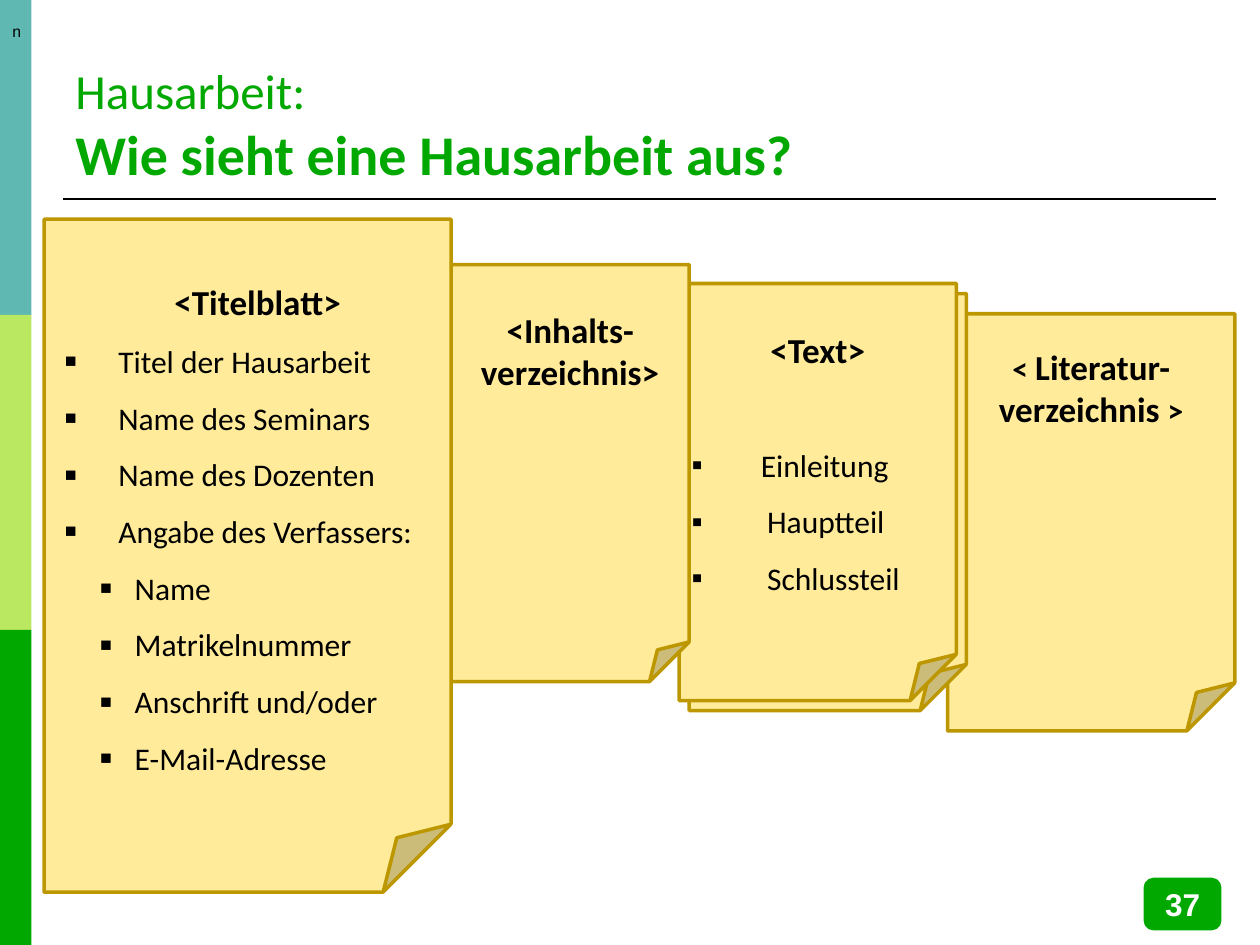
"""Build the slide that shows the parts of a term paper as sheets of paper."""
from dataclasses import dataclass

from lxml import etree
from pptx import Presentation
from pptx.dml.color import RGBColor
from pptx.enum import shapes, text
from pptx.oxml import ns
from pptx.util import Inches, Pt


@dataclass(frozen=True)
class Theme:
    """Colours, fonts and type sizes of the slide."""
    teal: str = "5FB8B2"
    lime: str = "BAE860"
    green: str = "00A800"
    paper: str = "FFEB99"
    paper_edge: str = "BD9700"
    black: str = "000000"
    white: str = "FFFFFF"
    body_font: str = "Calibri"
    label_font: str = "Arial"
    title: int = 32
    kicker: int = 28
    heading: int = 20
    body: int = 18
    label: int = 9
    edge: float = 2
    rule: float = 1.5


THEME = Theme()


def style_run(run, size, color=THEME.black, bold=False, font=THEME.body_font):
    """Set the type of one run."""
    run.font.name = font
    run.font.size = Pt(size)
    run.font.bold = bold
    run.font.color.rgb = RGBColor.from_string(color)


def set_insets(frame, left=0.1, top=0.05, right=0.1, bottom=0.05):
    """Set the margins of a text frame in inches."""
    frame.margin_left, frame.margin_top = Inches(left), Inches(top)
    frame.margin_right, frame.margin_bottom = Inches(right), Inches(bottom)


def add_block(slide, kind, box, fill, edge=None):
    """Add a filled preset shape with an optional outline."""
    block = slide.shapes.add_shape(kind, *map(Inches, box))
    block.shadow.inherit = False
    block.fill.solid()
    block.fill.fore_color.rgb = RGBColor.from_string(fill)
    if edge:
        block.line.color.rgb = RGBColor.from_string(edge)
        block.line.width = Pt(THEME.edge)
    else:
        block.line.fill.background()
    return block


def add_sheet(slide, box, heading=(), inset_left=0.1, inset_top=0.05, inset_right=0.1):
    """Add a folded sheet with a centred bold heading and return its text frame."""
    sheet = add_block(slide, shapes.MSO_SHAPE.FOLDED_CORNER, box,
                      THEME.paper, THEME.paper_edge)
    frame = sheet.text_frame
    frame.word_wrap = True
    frame.vertical_anchor = text.MSO_ANCHOR.TOP
    set_insets(frame, inset_left, inset_top, inset_right)
    paragraph = frame.paragraphs[0]
    paragraph.alignment = text.PP_ALIGN.CENTER
    for words, size in heading:
        run = paragraph.add_run()
        run.text = words
        style_run(run, size, bold=True)
    return frame


def add_bullet(frame, words, margin, hanging, bullet_size=100, space_before=0):
    """Add a square-bulleted line with a hanging indent in inches."""
    paragraph = frame.add_paragraph()
    paragraph.text = words
    paragraph.alignment = text.PP_ALIGN.LEFT
    properties = paragraph._p.get_or_add_pPr()
    properties.set("marL", str(Inches(margin)))
    properties.set("indent", str(-Inches(hanging)))
    for tag, name, value in (("a:buSzPct", "val", str(bullet_size * 1000)),
                             ("a:buFont", "typeface", THEME.label_font),
                             ("a:buChar", "char", "▪")):
        etree.SubElement(properties, ns.qn(tag)).set(name, value)
    paragraph.line_spacing = 1.5
    paragraph.space_before = Pt(space_before)
    style_run(paragraph.runs[0], THEME.body)


def add_side_bands(slide):
    """Add the three stacked colour bands at the left edge."""
    height = 2.5
    for row, color in enumerate((THEME.teal, THEME.lime, THEME.green)):
        add_block(slide, shapes.MSO_SHAPE.RECTANGLE,
                  (0, row * height, 0.25, height), color)


def add_title(slide):
    """Add the two-line title and the rule below it."""
    rule = slide.shapes.add_connector(shapes.MSO_CONNECTOR.STRAIGHT, Inches(0.5),
                                      Inches(1.58), Inches(9.65), Inches(1.58))
    rule.line.color.rgb = RGBColor.from_string(THEME.black)
    rule.line.width = Pt(THEME.rule)
    etree.SubElement(rule._element.spPr, ns.qn("a:effectLst"))
    title = slide.shapes.add_textbox(Inches(0.5), Inches(0.28), Inches(9.15), Inches(1.25))
    frame = title.text_frame
    frame.word_wrap = True
    frame.vertical_anchor = text.MSO_ANCHOR.BOTTOM
    frame.paragraphs[0].text = "Hausarbeit:\vWie sieht eine Hausarbeit aus?"
    kicker, question = frame.paragraphs[0].runs
    style_run(kicker, THEME.kicker, THEME.green)
    style_run(question, THEME.title, THEME.green, bold=True)


def add_corner_label(slide):
    """Add the small letter on the top colour band."""
    label = slide.shapes.add_textbox(Inches(0), Inches(0.12), Inches(0.27), Inches(0.25))
    frame = label.text_frame
    frame.word_wrap = False
    frame.vertical_anchor = text.MSO_ANCHOR.MIDDLE
    frame.text = "n"
    style_run(frame.paragraphs[0].runs[0], THEME.label, font=THEME.label_font)


def add_page_number(slide):
    """Add the page number badge."""
    badge = add_block(slide, shapes.MSO_SHAPE.ROUNDED_RECTANGLE,
                      (9.09, 6.98, 0.59, 0.39), THEME.green, THEME.green)
    frame = badge.text_frame
    frame.vertical_anchor = text.MSO_ANCHOR.MIDDLE
    frame.text = "37"
    frame.paragraphs[0].alignment = text.PP_ALIGN.CENTER
    style_run(frame.paragraphs[0].runs[0], THEME.body, THEME.white, True, THEME.label_font)


def add_sheets(slide):
    """Add the sheets of the paper from the last to the first."""
    add_sheet(slide, (7.52, 2.49, 2.28, 3.31),
              (("< ", THEME.body), ("Literatur-verzeichnis ", THEME.heading),
               (">", THEME.body)), inset_top=0.25)

    add_sheet(slide, (5.47, 2.33, 2.2, 3.31))
    main_part = add_sheet(slide, (5.39, 2.25, 2.2, 3.31),
                          (("<Text>", THEME.heading),), inset_top=0.36)
    for words, margin, gap in (("Einleitung", 0.55, 32), ("Hauptteil", 0.6, 0),
                               ("Schlussteil", 0.6, 0)):
        add_bullet(main_part, words, margin, margin, space_before=gap)

    add_sheet(slide, (3.58, 2.1, 1.89, 3.31),
              (("<Inhalts-verzeichnis>", THEME.heading),), inset_top=0.35)

    cover = add_sheet(slide, (0.35, 1.74, 3.23, 5.34), (("<Titelblatt>", THEME.heading),),
                      inset_left=0.16, inset_top=0.49, inset_right=0)
    for words in ("Titel der Hausarbeit", "Name des Seminars", "Name des Dozenten",
                  "Angabe des Verfassers:"):
        add_bullet(cover, words, 0.43, 0.43, bullet_size=120)
    for words in ("Name", "Matrikelnummer", "Anschrift und/oder", "E-Mail-Adresse"):
        add_bullet(cover, words, 0.56, 0.28, bullet_size=120)


def main():
    """Build and save the slide."""
    deck = Presentation()
    deck.slide_width, deck.slide_height = Inches(10), Inches(7.5)
    slide = deck.slides.add_slide(deck.slide_layouts[6])
    add_side_bands(slide)
    add_title(slide)
    add_corner_label(slide)
    add_sheets(slide)
    add_page_number(slide)
    deck.save("out.pptx")


if __name__ == "__main__":
    main()
